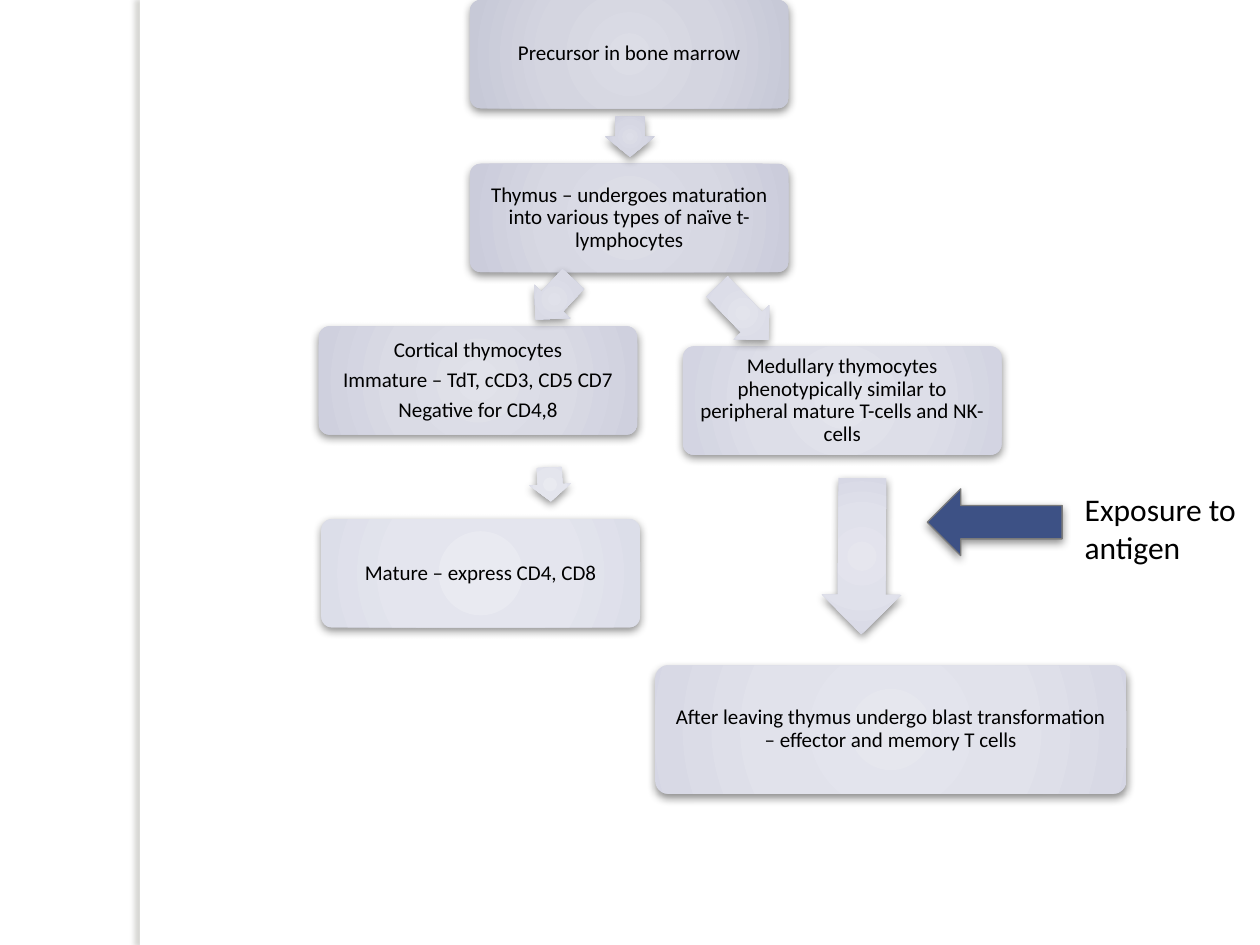
import pptx
import pptx.util
import pptx.dml.color
import pptx.enum.shapes
import pptx.enum.text
import pptx.oxml
import pptx.oxml.ns

Inches = pptx.util.Inches
Pt = pptx.util.Pt
SHAPE = pptx.enum.shapes.MSO_SHAPE
ALIGN = pptx.enum.text.PP_ALIGN
ANCHOR = pptx.enum.text.MSO_ANCHOR
NAMESPACE = pptx.oxml.ns.nsdecls("a")

STAGES = [
    ((3.73, 0, 2.53, 0.86), "DCDDE6 D4D5E0 C7C9D7 C3C5D5",
     "Precursor in bone marrow"),
    ((3.73, 1.3, 2.53, 0.86), "DEDFE8 D7D8E3 CBCCDB C7C8D9",
     "Thymus – undergoes maturation into various types of naïve t-lymphocytes"),
    ((2.53, 2.59, 2.53, 0.86), "E1E2EA DADBE5 CFD0DE CBCDDC",
     "Cortical thymocytes\nImmature – TdT, cCD3, CD5 CD7\nNegative for CD4,8"),
    ((5.42, 2.75, 2.53, 0.86), "E3E4EC DDDEE8 D3D4E2 D0D1E0",
     "Medullary thymocytes phenotypically similar to peripheral mature T-cells and NK-cells"),
    ((5.2, 5.28, 3.74, 1.02), "E6E7EE E1E2EB D8D9E5 D5D6E4",
     "After leaving thymus undergo blast transformation – effector and memory T cells"),
    ((2.55, 4.12, 2.53, 0.86), "E9EAF1 E4E5EE DCDEE9 DADBE8",
     "Mature – express CD4, CD8"),
]
STEPS = [
    ((4.84, 0.89, 0.32, 0.39), 90, "DDDEE8 D6D7E3 C9CBDB C5C7D9"),
    ((4.18, 2.18, 0.44, 0.39), 132.9, "E0E1EA D9DAE5 CDCFDE C9CBDD"),
    ((5.6, 2.29, 0.59, 0.39), 46.1, "E3E4EC DCDDE8 D2D3E2 CFD0E0"),
    ((6.22, 4.1, 1.24, 0.63), 90.4, "E6E6EE E0E1EB D7D8E5 D4D5E4"),
    ((4.23, 3.68, 0.27, 0.33), 87.3, "E9EAF0 E4E5ED DCDDE9 DADBE8"),
]


def colour(value):
    """Return the RGB colour for a hex string."""
    return pptx.dml.color.RGBColor.from_string(value)


def add_shadow(shape, tint="000000", opacity=43, blur=5, distance=2, angle=90):
    """Give a shape an outer shadow."""
    shape.shadow.inherit = False
    effects = shape._element.spPr.find(pptx.oxml.ns.qn("a:effectLst"))
    effects.append(pptx.oxml.parse_xml(
        f'<a:outerShdw {NAMESPACE} blurRad="{Pt(blur)}" dist="{Pt(distance)}" '
        f'dir="{angle * 60000}" rotWithShape="0"><a:srgbClr val="{tint}">'
        f'<a:alpha val="{opacity * 1000}"/></a:srgbClr></a:outerShdw>'))


def fill_radial(shape, tints):
    """Fill a shape with a gradient from its centre outwards."""
    stops = "".join(
        f'<a:gs pos="{position * 1000}"><a:srgbClr val="{tint}"/></a:gs>'
        for position, tint in zip((0, 50, 97, 100), tints.split()))
    shape.fill.background()
    properties = shape._element.spPr
    properties.replace(properties.find(pptx.oxml.ns.qn("a:noFill")), pptx.oxml.parse_xml(
        f'<a:gradFill {NAMESPACE} rotWithShape="1"><a:gsLst>{stops}</a:gsLst>'
        '<a:path path="circle"><a:fillToRect l="50000" t="50000" r="50000" b="50000"/>'
        '</a:path></a:gradFill>'))


def add_figure(slide, kind, box):
    """Add an unlined preset shape in a box given in inches."""
    figure = slide.shapes.add_shape(kind, *map(Inches, box))
    figure.line.fill.background()
    return figure


def format_text(paragraph, size):
    """Set the font of a paragraph's runs."""
    for run in paragraph.runs:
        run.font.name = "Calibri"
        run.font.size = Pt(size)
        run.font.color.rgb = colour("000000")


def add_side_strip(slide, box):
    """Add the white strip that casts a shadow down the left side."""
    strip = add_figure(slide, SHAPE.RECTANGLE, box)
    strip.fill.solid()
    strip.fill.fore_color.rgb = colour("FFFFFF")
    add_shadow(strip, "646457", 25, 3, 3, 180)


def add_stage(slide, box, tints, wording):
    """Add a rounded stage of the maturation with its wording."""
    stage = add_figure(slide, SHAPE.ROUNDED_RECTANGLE, box)
    stage.adjustments[0] = 0.1
    fill_radial(stage, tints)
    add_shadow(stage)
    frame = stage.text_frame
    frame.word_wrap = True
    frame.vertical_anchor = ANCHOR.MIDDLE
    frame.margin_left = frame.margin_right = Inches(0.08)
    frame.margin_top = frame.margin_bottom = Inches(0.08)
    frame.text = wording
    for paragraph in frame.paragraphs:
        paragraph.alignment = ALIGN.CENTER
        paragraph.line_spacing = 0.9
        paragraph.space_after = Pt(4.2)
        format_text(paragraph, 12)


def add_step(slide, box, angle, tints):
    """Add a turned block arrow between two stages."""
    step = add_figure(slide, SHAPE.RIGHT_ARROW, box)
    step.adjustments[0] = 0.6
    step.adjustments[1] = 0.5
    step.rotation = angle
    fill_radial(step, tints)
    add_shadow(step)


def add_exposure(slide, box):
    """Add the antigen arrow with its label to the right."""
    left, top, width, height = box
    arrow = add_figure(slide, SHAPE.LEFT_ARROW, (left, top + 0.04, 1.07, 0.53))
    arrow.fill.solid()
    arrow.fill.fore_color.rgb = colour("3D5185")
    arrow.line.color.rgb = colour("7A7A7A")
    arrow.line.width = Pt(0.75)
    add_shadow(arrow)
    label = slide.shapes.add_textbox(
        *map(Inches, (left + 1.15, top, width - 1.15, height)))
    label.text_frame.word_wrap = True
    label.text_frame.text = "Exposure to antigen"
    format_text(label.text_frame.paragraphs[0], 18)


def main():
    """Build the T-cell maturation slide and save it."""
    deck = pptx.Presentation()
    deck.slide_width, deck.slide_height = Inches(10), Inches(7.5)
    slide = deck.slides.add_slide(deck.slide_layouts[6])
    add_side_strip(slide, (1.11, 0, 0.08, 7.5))
    for stage in STAGES:
        add_stage(slide, *stage)
    for step in STEPS:
        add_step(slide, *step)
    add_exposure(slide, (7.36, 3.84, 2.64, 0.71))
    deck.save("out.pptx")


if __name__ == "__main__":
    main()
